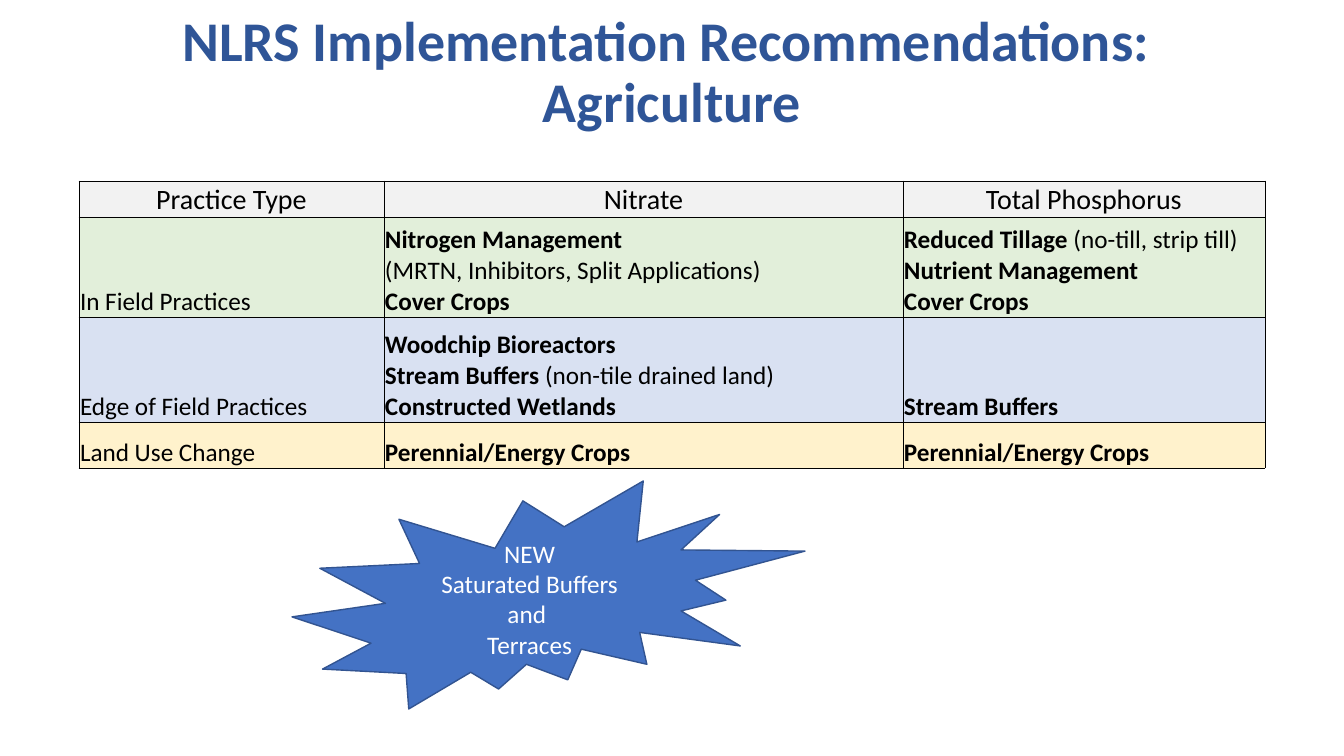
from lxml import etree
from pptx import Presentation
from pptx.dml.color import RGBColor
from pptx.enum.shapes import MSO_SHAPE
from pptx.enum.text import MSO_ANCHOR, PP_ALIGN
from pptx.oxml.ns import qn
from pptx.util import Emu, Pt

CENTER, LEFT = PP_ALIGN.CENTER, PP_ALIGN.LEFT
MIDDLE, BOTTOM = MSO_ANCHOR.MIDDLE, MSO_ANCHOR.BOTTOM
SEAL = MSO_SHAPE.EXPLOSION2

COLORS = {
    "title": "2F5597",
    "text": "000000",
    "white": "FFFFFF",
    "header": "F2F2F2",
    "field": "E2EFDA",
    "edge": "D9E1F2",
    "land": "FFF2CC",
    "seal": "4472C4",
    "seal_line": "325491",
}


def rgb(name):
    return RGBColor.from_string(COLORS[name])


def bold(text):
    return (text, True)


def plain(text):
    return (text, False)


class SlideBuilder:
    font = "Calibri"
    scale = 914400 / 100.8

    def __init__(self, prs):
        prs.slide_width, prs.slide_height = self.px(1344), self.px(756)
        self.slide = prs.slides.add_slide(prs.slide_layouts[6])

    def px(self, n):
        return Emu(round(n * self.scale))

    def box(self, *lengths):
        return [self.px(n) for n in lengths]

    def add_lines(self, p, lines, size, color, align):
        p.alignment = align
        for i, line in enumerate(lines):
            if i:
                p.add_line_break()
            for text, is_bold in line:
                r = p.add_run()
                r.text = text
                r.font.name = self.font
                r.font.size = Pt(size)
                r.font.bold = is_bold
                r.font.color.rgb = rgb(color)

    def title(self, box, lines):
        tf = self.slide.shapes.add_textbox(*self.box(*box)).text_frame
        tf.word_wrap = True
        tf.vertical_anchor = MIDDLE
        p = tf.paragraphs[0]
        p.line_spacing = 0.9
        self.add_lines(p, lines, 40, "title", CENTER)

    def borders(self, cell):
        tc_pr = cell._tc.get_or_add_tcPr()
        for side in ("lnL", "lnR", "lnT", "lnB"):
            ln = etree.SubElement(tc_pr, qn(f"a:{side}"), w=str(Pt(0.5)))
            fill = etree.SubElement(ln, qn("a:solidFill"))
            etree.SubElement(fill, qn("a:srgbClr"), val=COLORS["text"])

    def cell(self, cell, lines, fill, size, align):
        cell.margin_left = cell.margin_right = cell.margin_top = self.px(1)
        cell.margin_bottom = 0
        cell.vertical_anchor = BOTTOM
        self.borders(cell)
        cell.fill.solid()
        cell.fill.fore_color.rgb = rgb(fill)
        p = cell.text_frame.paragraphs[0]
        self.add_lines(p, lines, size, "text", align)

    def table(self, left, top, widths, heights, rows):
        box = self.box(left, top, sum(widths), sum(heights))
        table = self.slide.shapes.add_table(len(rows), len(widths), *box).table
        table.first_row = table.horz_banding = False
        for column, width in zip(table.columns, widths):
            column.width = self.px(width)
        for i, (fill, cells) in enumerate(rows):
            table.rows[i].height = self.px(heights[i])
            size, align = (18, LEFT) if i else (20, CENTER)
            for j, lines in enumerate(cells):
                self.cell(table.cell(i, j), lines, fill, size, align)

    def seal(self, box, paragraphs):
        sp = self.slide.shapes.add_shape(SEAL, *self.box(*box))
        sp.shadow.inherit = False
        sp.fill.solid()
        sp.fill.fore_color.rgb = rgb("seal")
        sp.line.color.rgb = rgb("seal_line")
        sp.line.width = Pt(1)
        tf = sp.text_frame
        tf.word_wrap = True
        tf.vertical_anchor = MIDDLE
        for i, text in enumerate(paragraphs):
            p = tf.add_paragraph() if i else tf.paragraphs[0]
            self.add_lines(p, [[plain(text)]], 18, "white", CENTER)


def main():
    prs = Presentation()
    s = SlideBuilder(prs)
    s.title((0, 1, 1344, 146), [
        [bold("NLRS Implementation Recommendations: ")],
        [bold("Agriculture")],
    ])

    cover_crops = [bold("Cover Crops")]
    energy_crops = [[bold("Perennial/Energy Crops")]]
    headings = ["Practice Type", "Nitrate", "Total Phosphorus"]
    s.table(79, 181, [305, 519, 362], [36, 100, 105, 46], [
        ("header", [[[plain(heading)]] for heading in headings]),
        ("field", [
            [[plain("In Field Practices")]],
            [
                [bold("Nitrogen Management")],
                [plain("(MRTN, Inhibitors, Split Applications)")],
                cover_crops,
            ],
            [
                [bold("Reduced Tillage "), plain("(no-till, strip till)")],
                [bold("Nutrient Management")],
                cover_crops,
            ],
        ]),
        ("edge", [
            [[plain("Edge of Field Practices")]],
            [
                [bold("Woodchip Bioreactors")],
                [bold("Stream Buffers "), plain("(non-tile drained land)")],
                [bold("Constructed Wetlands")],
            ],
            [[bold("Stream Buffers")]],
        ]),
        ("land", [[[plain("Land Use Change")]], energy_crops, energy_crops]),
    ])

    s.seal((292, 481, 513, 228), ["NEW", "Saturated Buffers and ", "Terraces"])
    prs.save("out.pptx")


if __name__ == "__main__":
    main()
